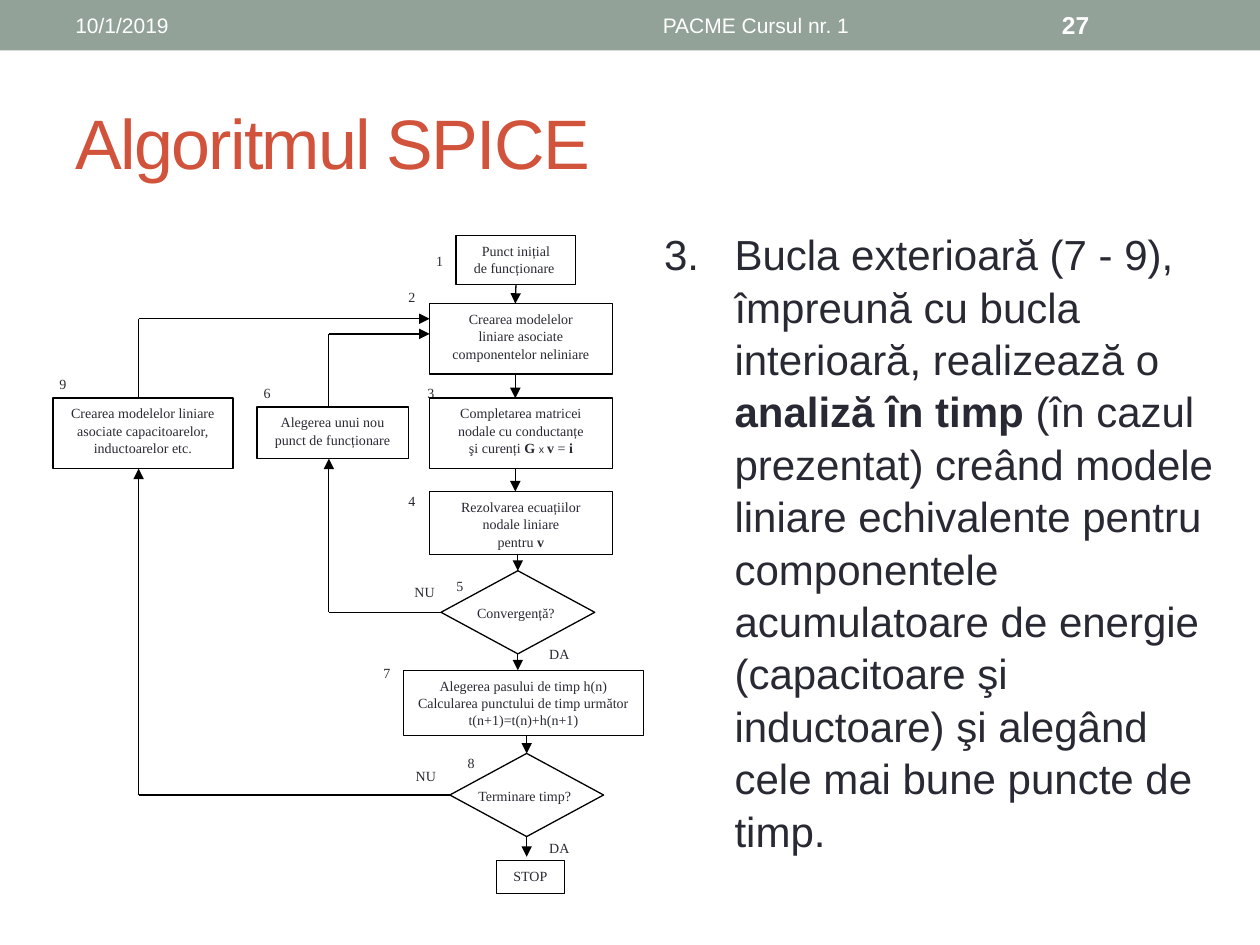
"""Build the slide that shows the SPICE algorithm as a flowchart."""
from lxml import etree
from pptx import Presentation
from pptx.dml.color import RGBColor
from pptx.enum import shapes, text
from pptx.oxml.ns import qn
from pptx.util import Inches, Pt

INK, BLACK, WHITE = "292934", "000000", "FFFFFF"
SERIF, SANS = "Times New Roman", "Arial"
LINE_SPACING = 1.04
RECTANGLE, DIAMOND = shapes.MSO_SHAPE.RECTANGLE, shapes.MSO_SHAPE.DIAMOND
TOP, LEFT, BOTTOM = 0, 1, 2
OUTER_X, INNER_X = 1.1, 2.61

NUMBERS = [
    ("1", 3.41, 1.99), ("2", 3.19, 2.28), ("3", 3.34, 3.04),
    ("4", 3.19, 3.9), ("5", 3.57, 4.57), ("6", 2.04, 3.04),
    ("7", 2.99, 5.26), ("8", 3.66, 5.98), ("9", 0.42, 2.97),
]
CAPTIONS = [
    ("Convergență?", 3.7, 4.78, 0.79), ("Terminare timp?", 3.77, 6.23, 0.79),
    ("DA", 4.31, 5.1, 0.26), ("DA", 4.31, 6.64, 0.26),
    ("NU", 3.24, 4.61, 0.26), ("NU", 3.25, 6.07, 0.26),
]
STEPS = {
    "start": (3.62, 1.87, 0.95, 0.39, "Punct inițial\nde funcționare "),
    "models": (3.41, 2.41, 1.45, 0.56,
               "Crearea modelelor\nliniare asociate\ncomponentelor neliniare"),
    "matrix": (3.41, 3.16, 1.45, 0.56,
               "Completarea matricei\nnodale cu conductanțe\n"
               "şi curenți |G |x |v| = |i"),
    "solve": (3.41, 3.9, 1.45, 0.5,
              "Rezolvarea ecuațiilor\nnodale liniare\npentru |v"),
    "time": (3.2, 5.32, 1.91, 0.52,
             "Alegerea pasului de timp h(n)\n"
             "Calcularea punctului de timp următor\nt(n+1)=t(n)+h(n+1)"),
    "stop": (3.94, 6.83, 0.54, 0.26, "STOP"),
    "point": (2.04, 3.23, 1.2, 0.41, "Alegerea unui nou\npunct de funcționare"),
    "storage": (0.42, 3.16, 1.43, 0.56,
                "Crearea modelelor liniare\nasociate capacitoarelor,\n"
                "inductoarelor etc."),
}
BODY = (
    "Bucla exterioară (7 - 9), împreună cu bucla interioară, realizează o "
    "|analiză în timp |(în cazul prezentat) creând modele liniare echivalente "
    "pentru componentele acumulatoare de energie (capacitoare şi inductoare) "
    "şi alegând cele mai bune puncte de timp."
)


def color(value):
    """Turn a hex string into a colour."""
    return RGBColor.from_string(value)


def place(shape, left, top, width, height):
    """Move and size a shape in inches."""
    shape.left, shape.top = Inches(left), Inches(top)
    shape.width, shape.height = Inches(width), Inches(height)


def style(span, size, name=SERIF, ink=INK, bold=False):
    """Set the font of a run."""
    span.font.size, span.font.name, span.font.bold = Pt(size), name, bold
    span.font.color.rgb = color(ink)


def write(paragraph, marked, size, name=SERIF):
    """Fill a paragraph, with every second part between bars in bold."""
    paragraph.line_spacing = LINE_SPACING
    for index, part in enumerate(marked.split("|")):
        span = paragraph.add_run()
        span.text = part
        style(span, size, name, bold=index % 2 == 1)


def add_block(page, kind, left, top, width, height, outlined=True):
    """Add a white shape with or without a thin black outline."""
    block = page.shapes.add_shape(
        kind, Inches(left), Inches(top), Inches(width), Inches(height))
    block.shadow.inherit = False
    block.fill.solid()
    block.fill.fore_color.rgb = color(WHITE)
    if outlined:
        block.line.color.rgb = color(BLACK)
        block.line.width = Pt(0.75)
    else:
        block.line.fill.background()
    return block


def add_step(page, left, top, width, height, wording):
    """Add a flowchart box with one paragraph per line."""
    box = add_block(page, RECTANGLE, left, top, width, height)
    frame = box.text_frame
    frame.vertical_anchor = text.MSO_ANCHOR.TOP
    frame.margin_left = frame.margin_right = Inches(0.05)
    for index, line in enumerate(wording.split("\n")):
        paragraph = frame.add_paragraph() if index else frame.paragraphs[0]
        paragraph.alignment = text.PP_ALIGN.CENTER
        write(paragraph, line, 8)
    return box


def add_label(page, wording, left, top, width=0.16, height=0.15):
    """Add a small centred label without an outline."""
    label = add_block(page, RECTANGLE, left, top, width, height, False)
    frame = label.text_frame
    frame.margin_left = frame.margin_right = 0
    frame.margin_top = frame.margin_bottom = 0
    frame.word_wrap = False
    frame.vertical_anchor = text.MSO_ANCHOR.MIDDLE
    frame.paragraphs[0].alignment = text.PP_ALIGN.CENTER
    write(frame.paragraphs[0], wording, 8)


def add_line(page, start, end, arrow=True, source=None, target=None):
    """Add a line, joined to the given (shape, side) pairs."""
    line = page.shapes.add_connector(
        shapes.MSO_CONNECTOR.STRAIGHT, *map(Inches, start + end))
    if source:
        line.begin_connect(*source)
    if target:
        line.end_connect(*target)
    line.line.color.rgb = color(BLACK)
    line.line.width = Pt(0.75)
    if arrow:
        etree.SubElement(line.line._get_or_add_ln(), qn("a:tailEnd"), type="triangle")
    etree.SubElement(line._element.spPr, qn("a:effectLst"))


def add_header(page):
    """Add the top band with date, course and page number."""
    band = add_block(page, RECTANGLE, 0, 0, 10, 0.4, False)
    band.fill.fore_color.rgb = color("93A299")
    align = text.PP_ALIGN
    for wording, left, width, size, alignment in [
            ("10/1/2019", 0.5, 3.17, 12, align.LEFT),
            ("PACME Cursul nr. 1", 3.75, 4.5, 12, align.CENTER),
            ("27", 8.33, 1.17, 14, align.LEFT)]:
        box = page.shapes.add_textbox(
            Inches(left), Inches(0.02), Inches(width), Inches(0.36))
        frame = box.text_frame
        frame.text = wording
        frame.word_wrap = True
        frame.vertical_anchor = text.MSO_ANCHOR.MIDDLE
        frame.paragraphs[0].alignment = alignment
        style(frame.paragraphs[0].runs[0], size, SANS, WHITE, size == 14)


def fill_title(title):
    """Place and write the title."""
    place(title, 0.5, 0.58, 9, 1.08)
    frame = title.text_frame
    frame.text = "Algoritmul SPICE"
    frame.auto_size = text.MSO_AUTO_SIZE.NONE
    frame.vertical_anchor = text.MSO_ANCHOR.MIDDLE
    frame.paragraphs[0].alignment = text.PP_ALIGN.LEFT
    span = frame.paragraphs[0].runs[0]
    style(span, 40, SANS, "D2533C")
    span.font._element.set("spc", "-100")


def fill_body(body):
    """Place and write the numbered paragraph."""
    place(body, 5.17, 1.75, 4.58, 4.95)
    body.text_frame.auto_size = text.MSO_AUTO_SIZE.NONE
    paragraph = body.text_frame.paragraphs[0]
    write(paragraph, BODY, 24, SANS)
    paragraph.space_before = Pt(0)
    properties = paragraph._p.get_or_add_pPr()
    properties.set("marL", str(Inches(0.56)))
    properties.set("indent", str(-Inches(0.56)))
    etree.SubElement(properties, qn("a:buAutoNum"), type="arabicPeriod", startAt="3")


def add_flowchart(page):
    """Add the numbered steps, the decisions and the flow between them."""
    for number in NUMBERS:
        add_label(page, *number)
    steps = {name: add_step(page, *step) for name, step in STEPS.items()}
    product = steps["matrix"].text_frame.paragraphs[2].runs[2]
    style(product, 6, SANS)
    converged = add_block(page, DIAMOND, 3.5, 4.53, 1.22, 0.66)
    finished = add_block(page, DIAMOND, 3.57, 5.98, 1.22, 0.66)
    for caption in CAPTIONS:
        add_label(page, *caption, height=0.17)

    add_line(page, (4.09, 2.26), (4.09, 2.41), source=(steps["start"], BOTTOM))
    for top, bottom in [(2.97, 3.16), (3.72, 3.9)]:
        add_line(page, (4.09, top), (4.09, bottom))
    add_line(page, (4.11, 4.4), (4.11, 4.53), target=(converged, TOP))
    add_line(page, (4.11, 5.19), (4.11, 5.32), source=(converged, BOTTOM))
    add_line(page, (4.18, 5.84), (4.18, 5.98), target=(finished, TOP))
    add_line(page, (4.18, 6.64), (4.18, 6.8), source=(finished, BOTTOM))

    for x, decision, edge, low, bottom, top, high in [
            (INNER_X, converged, 3.5, 4.86, 3.64, 3.23, 2.65),
            (OUTER_X, finished, 3.57, 6.31, 3.72, 3.16, 2.53)]:
        add_line(page, (edge, low), (x, low), False, source=(decision, LEFT))
        add_line(page, (x, low), (x, bottom))
        add_line(page, (x, top), (x, high), False)
        add_line(page, (x, high), (3.41, high))


def main():
    """Build and save the deck."""
    deck = Presentation()
    deck.slide_width, deck.slide_height = Inches(10), Inches(7.5)
    page = deck.slides.add_slide(deck.slide_layouts[1])
    add_header(page)
    fill_title(page.shapes.title)
    fill_body(page.placeholders[1])
    add_flowchart(page)
    deck.save("out.pptx")


if __name__ == "__main__":
    main()
